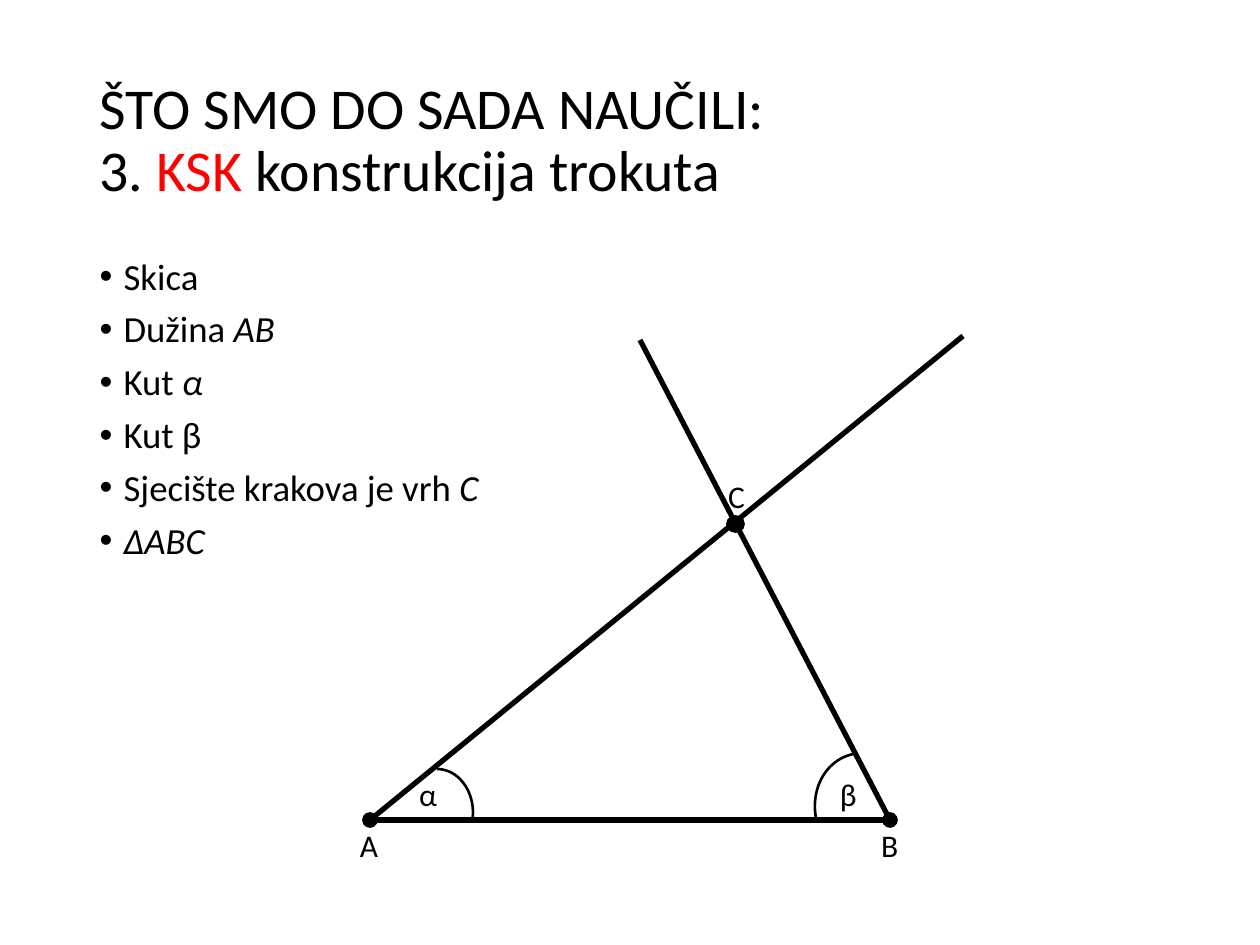
from dataclasses import dataclass

import pptx
import pptx.util
from pptx.dml.color import RGBColor
from pptx.enum.shapes import MSO_CONNECTOR, MSO_SHAPE
from pptx.enum.text import MSO_ANCHOR, MSO_AUTO_SIZE, PP_ALIGN
from pptx.oxml.ns import qn
from lxml import etree

EMU_PER_PX = 914400 / 126


@dataclass(frozen=True)
class Theme:
    font: str = "Calibri"
    ink: RGBColor = RGBColor(0, 0, 0)
    accent: RGBColor = RGBColor(255, 0, 0)
    title_size: float = 33
    body_size: float = 21
    label_size: float = 18
    side_width: float = 3
    arc_width: float = 1.5
    point_width: float = 1


@dataclass(frozen=True)
class Segment:
    start: tuple[int, int]
    end: tuple[int, int]
    dotted_ends: bool = False


@dataclass(frozen=True)
class Label:
    text: str
    left: int
    top: int
    width: int
    inset: int = 12


@dataclass(frozen=True)
class AngleArc:
    frame: tuple[int, int, int, int]
    start: float
    end: float
    rotation: float = 0


THEME = Theme()

# Each step is plain text followed by an italic part
STEPS = [
    ("Skica", ""),
    ("Dužina ", "AB"),
    ("Kut ", "α"),
    ("Kut β", ""),
    ("Sjecište krakova je vrh ", "C"),
    ("", "ΔABC"),
]

A, B = (370, 820), (890, 820)
SEGMENTS = [
    Segment(B, A, dotted_ends=True),
    Segment(A, (963, 336)),
    Segment(B, (640, 340)),
]
ARCS = [
    AngleArc((401, 769, 72, 87), 162, 4.95),
    AngleArc((808, 760, 123, 106), 171.82, 7.69, rotation=245),
]
LABELS = [
    Label("A", 348, 820, 45),
    Label("B", 869, 820, 43),
    Label("α", 407, 769, 44),
    Label("β", 840, 769, 18, inset=0),
    Label("C", 728, 471, 18, inset=0),
]
POINT_C = (727, 516, 17, 16)


def px(length: int) -> int:
    return round(length * EMU_PER_PX)


def place(shape, frame: tuple[int, int, int, int]) -> None:
    shape.left, shape.top, shape.width, shape.height = map(px, frame)


def set_font(para, size: float) -> None:
    para.font.name = THEME.font
    para.font.size = pptx.util.Pt(size)
    para.font.color.rgb = THEME.ink


def add_span(para, text: str):
    span = para.add_run()
    span.text = text
    return span


def fill_title(title) -> None:
    place(title, (87, 50, 1086, 183))
    frame = title.text_frame
    frame.auto_size = MSO_AUTO_SIZE.NONE
    frame.vertical_anchor = MSO_ANCHOR.MIDDLE
    para = frame.paragraphs[0]
    para.alignment = PP_ALIGN.LEFT
    para.line_spacing = 0.9
    set_font(para, THEME.title_size)
    add_span(para, "ŠTO SMO DO SADA NAUČILI:")
    para.add_line_break()
    add_span(para, "3. ")
    add_span(para, "KSK").font.color.rgb = THEME.accent
    add_span(para, " konstrukcija trokuta")


def fill_steps(body) -> None:
    place(body, (87, 252, 1086, 325))
    frame = body.text_frame
    frame.auto_size = MSO_AUTO_SIZE.NONE
    for index, (plain, italic) in enumerate(STEPS):
        para = frame.add_paragraph() if index else frame.paragraphs[0]
        para.line_spacing = 0.9
        para.space_before = pptx.util.Pt(7.5)
        set_font(para, THEME.body_size)
        properties = para._p.get_or_add_pPr()
        properties.set("marL", str(px(24)))
        properties.set("indent", str(px(-24)))
        if plain:
            add_span(para, plain)
        if italic:
            add_span(para, italic).font.italic = True


def draw_segment(page, segment: Segment) -> None:
    line = page.shapes.add_connector(
        MSO_CONNECTOR.STRAIGHT, *map(px, segment.start + segment.end))
    line.line.color.rgb = THEME.ink
    line.line.width = pptx.util.Pt(THEME.side_width)
    properties = line._element.spPr
    if segment.dotted_ends:
        outline = properties.find(qn("a:ln"))
        for end in ("a:headEnd", "a:tailEnd"):
            etree.SubElement(outline, qn(end)).set("type", "oval")
    etree.SubElement(properties, qn("a:effectLst"))


def draw_outlined(page, kind: MSO_SHAPE, frame: tuple[int, int, int, int],
                  width: float):
    shape = page.shapes.add_shape(kind, *map(px, frame))
    shape.shadow.inherit = False
    shape.line.color.rgb = THEME.ink
    shape.line.width = pptx.util.Pt(width)
    return shape


def draw_arc(page, arc: AngleArc) -> None:
    shape = draw_outlined(page, MSO_SHAPE.ARC, arc.frame, THEME.arc_width)
    shape.fill.background()
    shape.adjustments[0] = arc.start
    shape.adjustments[1] = arc.end
    shape.rotation = arc.rotation


def draw_label(page, label: Label) -> None:
    box = page.shapes.add_textbox(
        *map(px, (label.left, label.top, label.width, 50)))
    frame = box.text_frame
    frame.word_wrap = False
    frame.margin_left = frame.margin_right = px(label.inset)
    para = frame.paragraphs[0]
    para.text = label.text
    set_font(para, THEME.label_size)


def main() -> None:
    deck = pptx.Presentation()
    deck.slide_width = pptx.util.Inches(10)
    deck.slide_height = pptx.util.Inches(7.5)
    page = deck.slides.add_slide(deck.slide_layouts[1])

    # Title and construction steps
    fill_title(page.shapes.title)
    fill_steps(page.placeholders[1])

    # Triangle construction
    for segment in SEGMENTS:
        draw_segment(page, segment)
    for arc in ARCS:
        draw_arc(page, arc)
    point = draw_outlined(page, MSO_SHAPE.FLOWCHART_CONNECTOR, POINT_C,
                          THEME.point_width)
    point.fill.solid()
    point.fill.fore_color.rgb = THEME.ink
    for label in LABELS:
        draw_label(page, label)

    deck.save("out.pptx")


if __name__ == "__main__":
    main()
